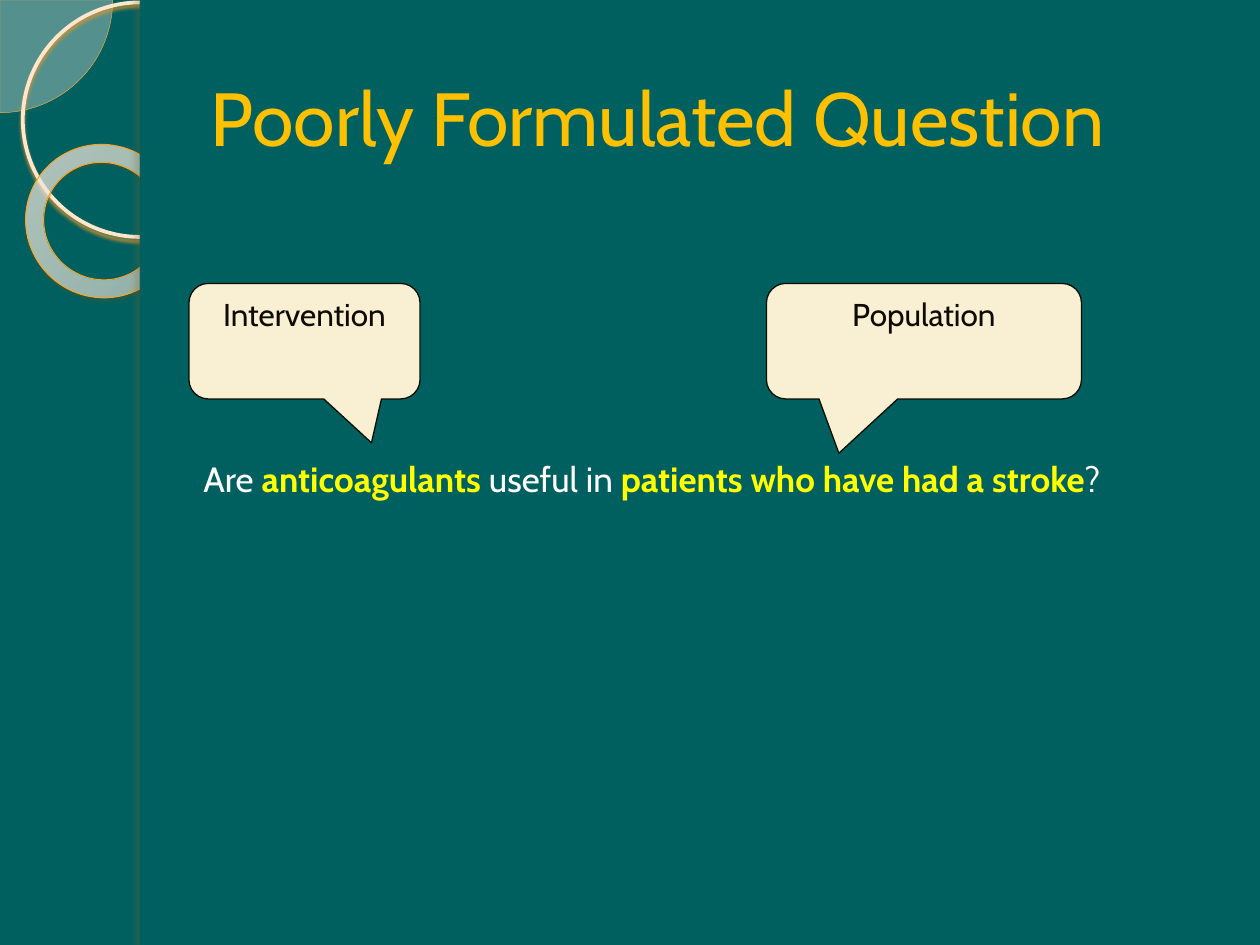
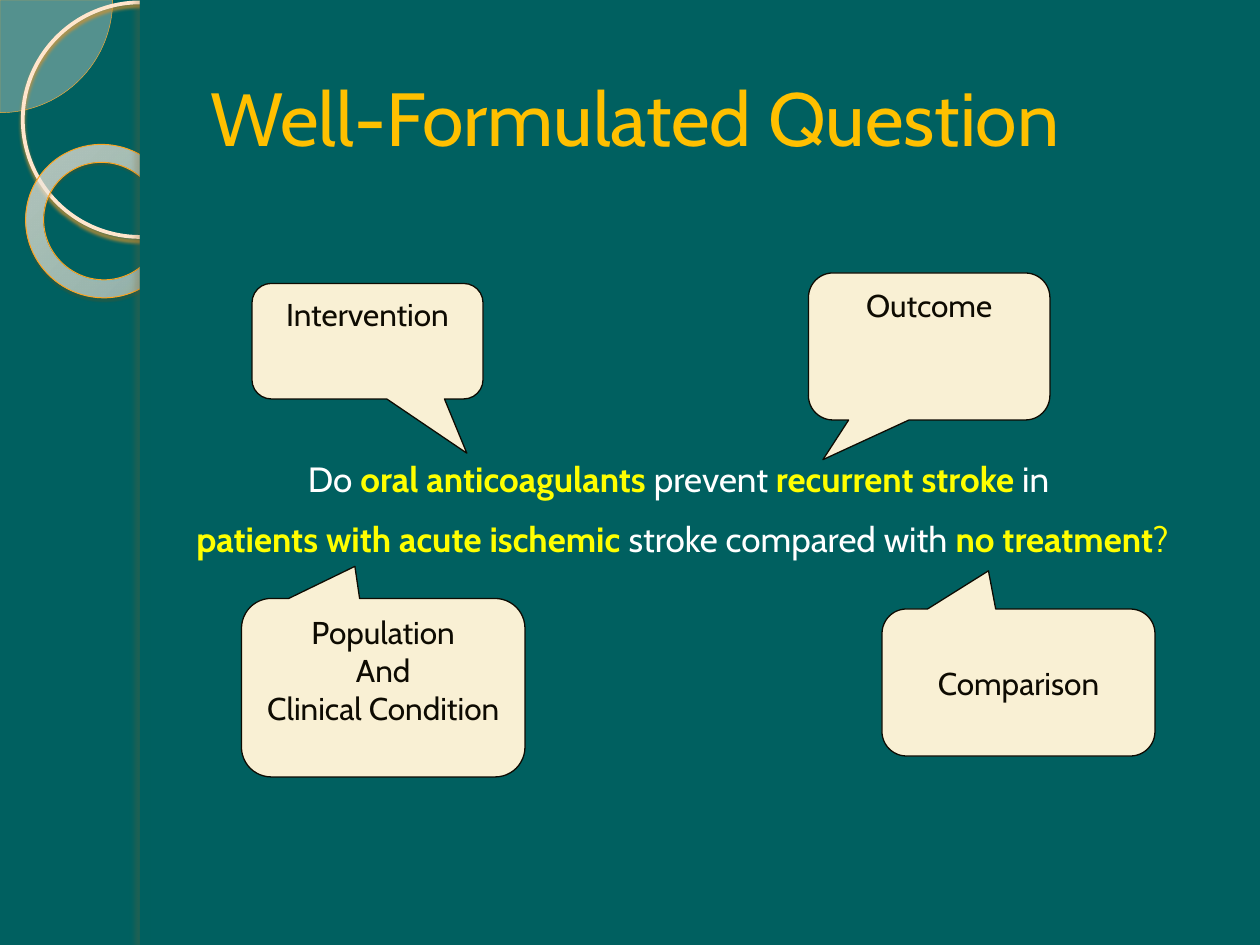
import lxml.etree
import pptx
import pptx.dml.color
import pptx.enum.shapes
import pptx.enum.text
import pptx.oxml
import pptx.oxml.ns
import pptx.util

Pt = pptx.util.Pt
RGBColor = pptx.dml.color.RGBColor
SHAPE = pptx.enum.shapes.MSO_SHAPE
ALIGN = pptx.enum.text.PP_ALIGN
ANCHOR = pptx.enum.text.MSO_ANCHOR
AUTO_SIZE = pptx.enum.text.MSO_AUTO_SIZE
qn = pptx.oxml.ns.qn

TEAL = RGBColor(0x00, 0x60, 0x60)
GOLD = RGBColor(0xFF, 0xC0, 0x00)
YELLOW = RGBColor(0xFF, 0xFF, 0x00)
WHITE = RGBColor(0xFF, 0xFF, 0xFF)
CREAM = RGBColor(0xF9, 0xF0, 0xD4)
INK = RGBColor(0x0E, 0x0B, 0x02)
PALE = RGBColor(0xFF, 0xF5, 0xED)
PIE_LINE = RGBColor(0xFF, 0xAC, 0x32)
RING_LINE = RGBColor(0xFF, 0xE6, 0xCD)
RING_SHADOW = RGBColor(0xD9, 0x94, 0x2E)
DONUT_LINE = RGBColor(0xFF, 0xA4, 0x1E)
DONUT_SHADOW = RGBColor(0x7A, 0x4C, 0x09)
EDGE_SHADOW = RGBColor(0x82, 0x61, 0x2E)
DONUT_STOPS = [
    (0, RGBColor(0xFF, 0xF9, 0xF3), 70),
    (70, RGBColor(0xFF, 0xFC, 0xF9), 55),
    (100, RGBColor(0xFF, 0xB0, 0x3B), 60),
]

FONT = "Cabin"
TITLE = {"name": FONT, "size": Pt(43), "color": GOLD}
PLAIN = {"name": FONT, "size": Pt(20), "bold": False, "color": WHITE}
KEY = {**PLAIN, "bold": True, "color": YELLOW}
KEY_MARK = {**KEY, "bold": False}
LABEL = {"name": FONT, "size": Pt(18), "color": INK}
MARGINS = {"margin_left": Pt(7.2), "margin_right": Pt(7.2),
           "margin_top": Pt(3.6), "margin_bottom": Pt(3.6), "word_wrap": True}


def apply(target, values):
    for name, value in values.items():
        if name == "color":
            target.color.rgb = value
        else:
            setattr(target, name, value)


def points(*lengths):
    return [Pt(length) for length in lengths]


def add_alpha(color_element, opacity):
    lxml.etree.SubElement(color_element, qn("a:alpha"), val=str(opacity * 1000))


def add_color(parent, color, opacity):
    add_alpha(lxml.etree.SubElement(parent, qn("a:srgbClr"), val=str(color)), opacity)


class Deck:
    def __init__(self):
        self.presentation = pptx.Presentation()
        self.presentation.slide_width, self.presentation.slide_height = points(720, 540)
        self.layout = self.presentation.slide_layouts[5]
        background = self.layout.background.fill
        background.solid()
        background.fore_color.rgb = TEAL
        self.slide = None

    def new_slide(self, title):
        self.slide = self.presentation.slides.add_slide(self.layout)
        shape = self.slide.shapes.title
        apply(shape, dict(zip(("left", "top", "width", "height"),
                              points(113, 21.6, 590.4, 90))))
        apply(shape.text_frame, {**MARGINS, "vertical_anchor": ANCHOR.MIDDLE,
                                 "auto_size": AUTO_SIZE.NONE})
        self.add_text(shape.text_frame, [[(title, TITLE)]], ALIGN.LEFT)

    def add_text(self, frame, paragraphs, alignment=ALIGN.CENTER, gap=0):
        """Fill a frame with paragraphs, each a list of (text, format) runs."""
        for index, runs in enumerate(paragraphs):
            paragraph = frame.add_paragraph() if index else frame.paragraphs[0]
            paragraph.alignment = alignment
            if index:
                paragraph.space_before = Pt(gap)
            for text, style in runs:
                run = paragraph.add_run()
                run.text = text
                apply(run.font, style)

    def shape(self, kind, box, fill=None, line=None, adjustments=(), shadow=None):
        """Line is (color, width); shadow is (color, opacity, blur, distance, angle)."""
        shape = self.slide.shapes.add_shape(kind, *points(*box))
        for index, value in enumerate(adjustments):
            shape.adjustments[index] = value
        if fill is None:
            shape.fill.background()
        else:
            shape.fill.solid()
            shape.fill.fore_color.rgb = fill
        if line is None:
            shape.line.fill.background()
        else:
            shape.line.color.rgb = line[0]
            shape.line.width = Pt(line[1])
        shape.shadow.inherit = False
        if shadow:
            color, opacity, blur, distance, angle = shadow
            effects = shape.element.spPr.find(qn("a:effectLst"))
            outer = lxml.etree.SubElement(
                effects, qn("a:outerShdw"), blurRad=str(Pt(blur)), dist=str(Pt(distance)),
                dir=str(angle * 60000), algn="tl", rotWithShape="0")
            add_color(outer, color, opacity)
        return shape

    def set_opacity(self, shape, opacity):
        fill = shape.element.spPr.find(qn("a:solidFill"))
        add_alpha(fill.find(qn("a:srgbClr")), opacity)

    def set_radial_gradient(self, shape, stops, focus):
        properties = shape.element.spPr
        gradient = pptx.oxml.parse_xml(
            '<a:gradFill xmlns:a="http://schemas.openxmlformats.org/drawingml/2006/main"'
            ' rotWithShape="1"><a:gsLst/><a:path path="circle"><a:fillToRect/></a:path>'
            '</a:gradFill>')
        for position, color, opacity in stops:
            stop = lxml.etree.SubElement(gradient[0], qn("a:gs"), pos=str(position * 1000))
            add_color(stop, color, opacity)
        for side, percent in zip("ltrb", focus):
            gradient[1][0].set(side, str(percent * 1000))
        properties.replace(properties.find(qn("a:noFill")), gradient)

    def decorate_layout(self):
        """Draw the side band on the current slide and move it to the shared layout."""
        pie = self.shape(SHAPE.PIE, (-64.4, -64.4, 128.8, 128.8), PALE,
                         (PIE_LINE, 0.25), (0, 54))
        self.set_opacity(pie, 33)
        ring = self.shape(SHAPE.OVAL, (13, 1.4, 134, 134), line=(RING_LINE, 2.15),
                          shadow=(RING_SHADOW, 85, 2, 2, 90))
        donut = self.shape(SHAPE.DONUT, (14.4, 82.8, 88.6, 87.1), line=(DONUT_LINE, 0.58),
                           adjustments=[0.118], shadow=(DONUT_SHADOW, 35, 1, 1.2, 75))
        donut.rotation = 38.6
        self.set_radial_gradient(donut, DONUT_STOPS, (-408, -50, 508, 150))
        panel = self.shape(SHAPE.RECTANGLE, (80, 0, 640, 540), TEAL)
        edge = self.shape(SHAPE.RECTANGLE, (80, 0, 5.8, 540), TEAL,
                          shadow=(EDGE_SHADOW, 25, 3, 3, 180))
        for number, shape in enumerate((pie, ring, donut, panel, edge), start=101):
            shape.element.nvSpPr.cNvPr.set("id", str(number))
            self.layout.shapes.element.append(shape.element)

    def question(self, box, paragraphs):
        frame = self.slide.shapes.add_textbox(*points(*box)).text_frame
        apply(frame, {**MARGINS, "auto_size": AUTO_SIZE.SHAPE_TO_FIT_TEXT})
        self.add_text(frame, paragraphs, gap=10)

    def callout(self, box, pointer, *lines, anchor=ANCHOR.TOP):
        shape = self.shape(SHAPE.ROUNDED_RECTANGULAR_CALLOUT, box, CREAM, (INK, 0.75),
                           (*pointer, 0.167))
        apply(shape.text_frame, {**MARGINS, "vertical_anchor": anchor})
        self.add_text(shape.text_frame, [[(line, LABEL)] for line in lines])


def main():
    deck = Deck()

    deck.new_slide("Poorly Formulated Question")
    deck.decorate_layout()
    deck.question((66.5, 258, 612, 31.5), [
        [("Are ", PLAIN), ("anticoagulants", KEY), (" useful in ", PLAIN),
         ("patients who have had a stroke", KEY), ("?", PLAIN)],
    ])
    deck.callout((108, 162, 132, 66), (0.29, 0.88), "Intervention")
    deck.callout((438, 162, 180, 66), (-0.27, 0.97), "Population")

    deck.new_slide("Well-Formulated Question")
    deck.question((78, 258, 624, 67.5), [
        [("Do ", PLAIN), ("oral anticoagulants ", KEY), ("prevent ", PLAIN),
         ("recurrent stroke ", KEY), ("in ", PLAIN)],
        [("patients with acute ischemic ", KEY), ("stroke compared with ", PLAIN),
         ("no treatment", KEY), ("?", KEY_MARK)],
    ])
    deck.callout((144, 162, 132, 66), (0.43, 0.97), "Intervention")
    deck.callout((462, 156, 138, 84), (-0.44, 0.77), "Outcome")
    deck.callout((138, 342, 162, 102), (-0.1, -0.68),
                 "Population", "And", "Clinical Condition")
    deck.callout((504, 348, 156, 84), (-0.11, -0.76), "Comparison", anchor=ANCHOR.MIDDLE)

    deck.presentation.save("out.pptx")


if __name__ == "__main__":
    main()
